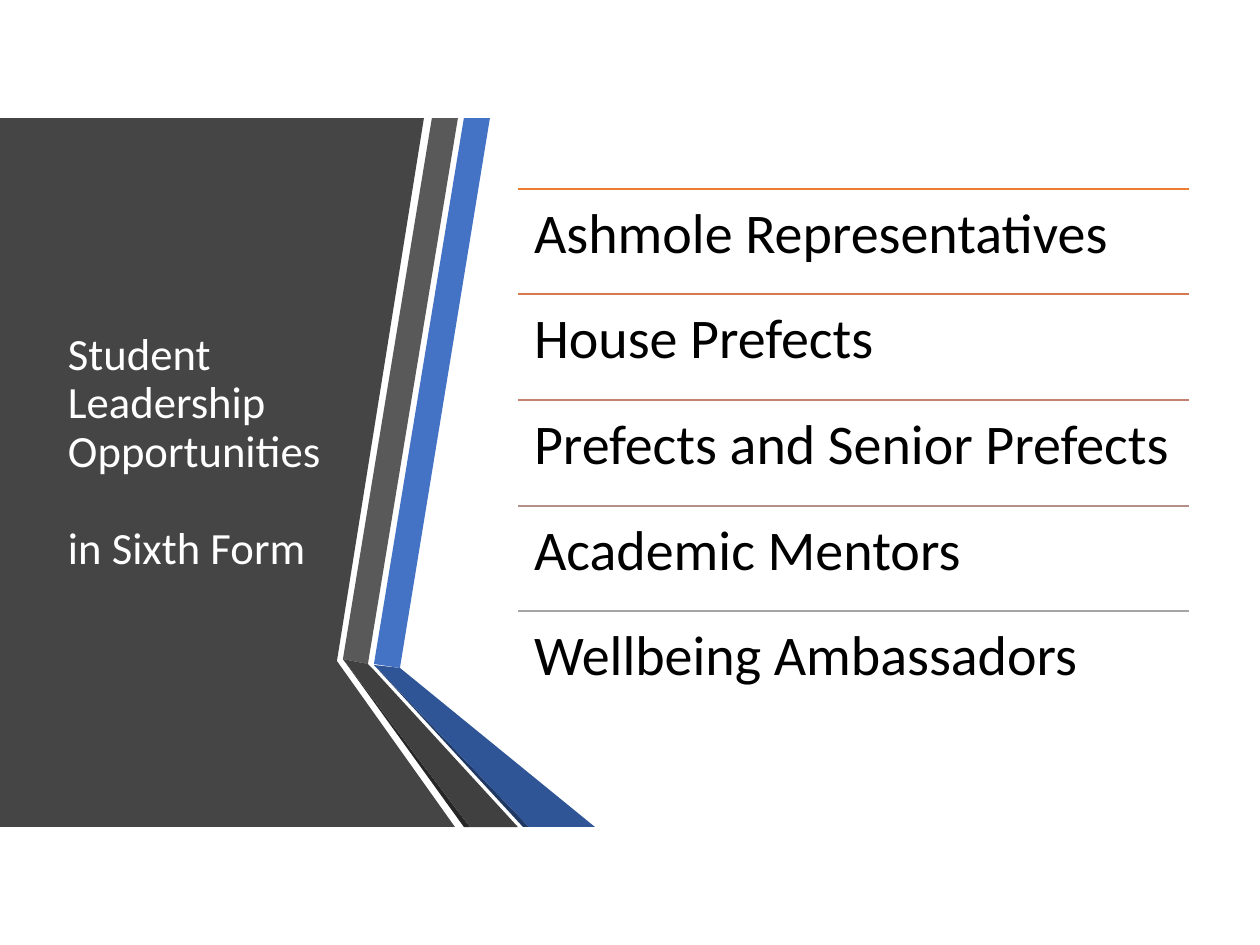
import pptx
import pptx.dml.color
import pptx.enum.shapes
import pptx.enum.text
import pptx.oxml.ns
import pptx.util
import lxml.etree

SCALE = 914400 / 126


def emu(px):
    return pptx.util.Emu(round(px * SCALE))


def color(code):
    return pptx.dml.color.RGBColor.from_string(code)


class Deck:
    """Holds the style and the current slide, and draws each kind of element."""

    font = "Calibri"
    spacing = 0.9

    def __init__(self, width, height):
        self.file = pptx.Presentation()
        self.file.slide_width = emu(width)
        self.file.slide_height = emu(height)
        self.slide = self.file.slides.add_slide(self.file.slide_layouts[6])

    def shape(self, points, fill):
        pen = self.slide.shapes.build_freeform(*points[0], scale=SCALE)
        pen.add_line_segments(points[1:], close=True)
        form = pen.convert_to_shape()
        form.shadow.inherit = False
        form.fill.solid()
        form.fill.fore_color.rgb = color(fill)
        form.line.fill.background()

    def rule(self, left, top, width, ink):
        line = self.slide.shapes.add_connector(
            pptx.enum.shapes.MSO_CONNECTOR.STRAIGHT,
            emu(left), emu(top), emu(left + width), emu(top))
        line.line.color.rgb = color(ink)
        line.line.width = pptx.util.Pt(1)
        lxml.etree.SubElement(line._element.spPr, pptx.oxml.ns.qn("a:effectLst"))

    def text(self, box, lines, size, ink, anchor, inset, gap=0):
        frame = self.slide.shapes.add_textbox(*map(emu, box)).text_frame
        frame.word_wrap = True
        frame.vertical_anchor = anchor
        frame.margin_left = frame.margin_right = emu(inset)
        frame.margin_top = frame.margin_bottom = emu(inset)
        for i, line in enumerate(lines):
            para = frame.add_paragraph() if i else frame.paragraphs[0]
            para.line_spacing = self.spacing
            if i:
                para.space_before = pptx.util.Pt(gap)
            run = para.add_run()
            run.text = line
            run.font.name = self.font
            run.font.size = pptx.util.Pt(size)
            run.font.color.rgb = color(ink)


def main():
    deck = Deck(1260, 945)
    top, base = 118, 827
    bands = [
        ("454545", [(0, top), (424, top), (337, 661), (455, base), (0, base)]),
        ("4472C4", [(374, 664), (400, 668), (490, top), (464, top)]),
        ("595959", [(458, top), (432, top), (343, 659), (368, 664)]),
        ("262626", [(343, 659), (464, base), (470, base)]),
        ("203864", [(374, 665), (523, base), (529, base)]),
        ("2F5597", [(374, 665), (529, base), (595, base), (400, 668)]),
        ("404040", [(518, base), (373, 669), (368, 664), (343, 659), (470, base)]),
    ]
    for fill, points in bands:
        deck.shape(points, fill)

    anchor = pptx.enum.text.MSO_ANCHOR
    deck.text((55, 189, 287, 528),
              ["Student Leadership Opportunities", "in Sixth Form"],
              25.5, "FFFFFF", anchor.MIDDLE, 13, gap=28)

    roles = [
        ("Ashmole Representatives", "ED7D31"),
        ("House Prefects", "D87A51"),
        ("Prefects and Senior Prefects", "C48170"),
        ("Academic Mentors", "B4908B"),
        ("Wellbeing Ambassadors", "A5A5A5"),
    ]
    left, width, first, pitch = 518, 671, 189, 105.5
    for i, (role, ink) in enumerate(roles):
        row = round(first + i * pitch)
        deck.rule(left, row, width, ink)
        deck.text((left, row, width, 106), [role], 32, "000000", anchor.TOP, 16)

    deck.file.save("out.pptx")


if __name__ == "__main__":
    main()
